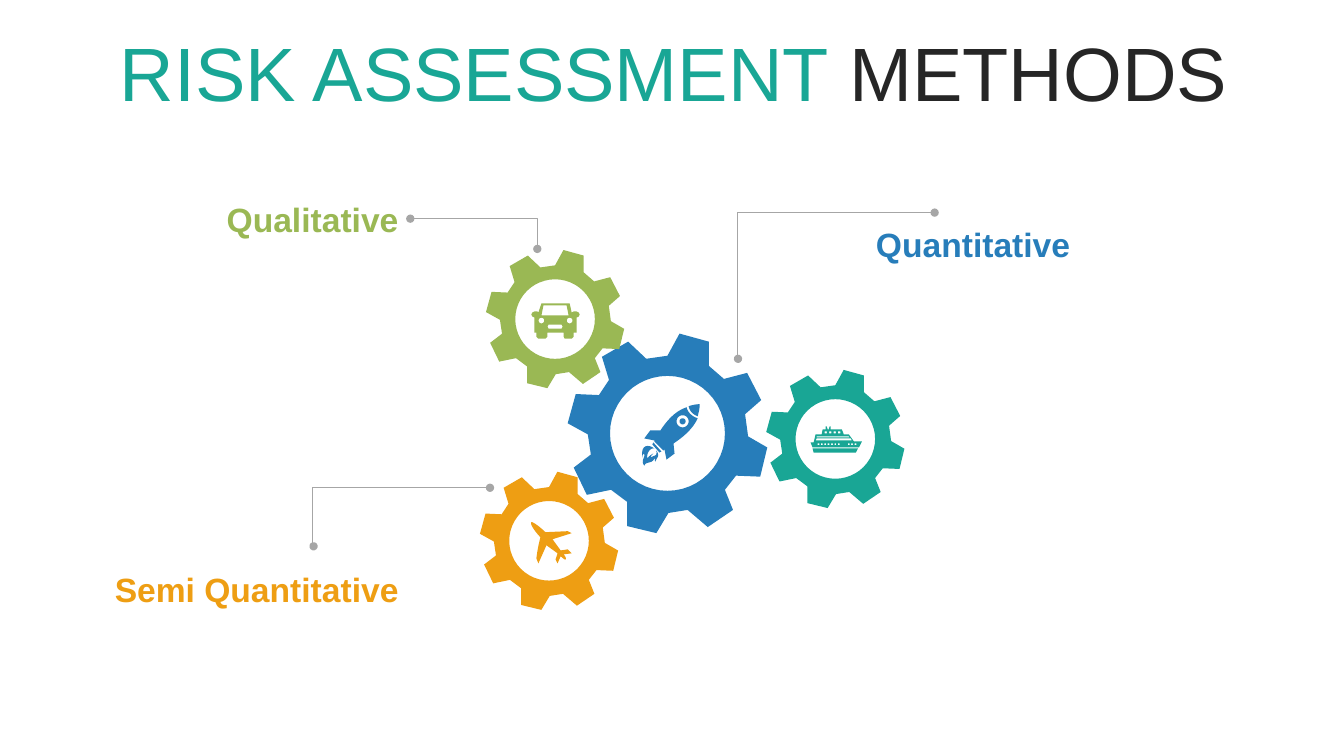
import math

from pptx import Presentation
from pptx import util as u
from pptx.dml.color import RGBColor
from pptx.enum import shapes, text
from pptx.oxml.ns import qn

COLORS = {
    "teal": "19A695", "blue": "277DBA", "green": "9AB854",
    "orange": "EE9E13", "ink": "262626", "leader": "A6A6A6",
}
FONT = "Arial"
WIDTH, HEIGHT = u.Inches(13.33), u.Inches(7.5)
UNIT = u.Inches(0.01)


def across(percent):
    return round(WIDTH * percent / 100)


def down(percent):
    return round(HEIGHT * percent / 100)


def color(name):
    return RGBColor.from_string(COLORS[name])


def circle(x, y, radius, steps=48):
    angles = [2 * math.pi * step / steps for step in range(steps)]
    return [(x + radius * math.cos(a), y + radius * math.sin(a)) for a in angles]


def rectangle(x, y, width, height):
    return [(x, y), (x + width, y), (x + width, y + height), (x, y + height)]


GEAR_SIZE = 198
GEAR = [
    [(111, 0), (140, 8), (140, 32), (155, 45), (178, 39), (192, 66), (176, 80),
     (179, 102), (198, 113), (191, 142), (167, 141), (156, 155), (164, 175),
     (139, 192), (119, 175), (100, 178), (88, 198), (59, 191), (59, 167),
     (43, 155), (19, 160), (6, 133), (23, 120), (20, 100), (0, 89), (8, 60),
     (31, 61), (41, 46), (34, 23), (60, 8), (78, 25), (99, 22)],
    circle(99, 99, 57),
]
CAR = [
    [(10, 0), (38, 0), (40, 9), (42, 8), (45, 8), (47, 9), (48, 11), (47, 13),
     (45, 14), (45, 29), (42, 29), (42, 33), (40, 35), (33, 35), (32, 33),
     (32, 29), (16, 29), (16, 33), (14, 35), (7, 35), (5, 33), (5, 29), (3, 29),
     (3, 14), (1, 13), (0, 11), (1, 9), (3, 8), (6, 8), (7, 9)],
    [(12, 2), (10, 12), (37, 12), (35, 2)],
    [(17, 21), (16, 23), (17, 25), (30, 25), (31, 23), (30, 21)],
    circle(10, 17, 2.8),
    circle(38, 17, 2.8),
]
SHIP = [
    [(19, 0), (20, 0), (20, 3), (31, 3), (33, 8), (38, 8), (43, 15), (51, 15),
     (48, 21), (2, 21), (0, 16), (3, 16), (5, 8), (11, 8), (12, 3), (15, 3),
     (15, 0), (16, 0), (17, 3), (18, 3)],
    [(2, 22), (47, 22), (45, 26), (3, 26)],
    [(6, 12), (5, 14), (41, 14), (40, 12)],
    [(6, 10), (6, 11), (39, 11), (38, 10)],
    *[rectangle(7 + 3.35 * i, 17, 1.7, 1.7) for i in range(7)],
    *[rectangle(37 + 3.35 * i, 17, 1.7, 1.7) for i in range(3)],
    *[rectangle(14 + 4.4 * i, 5, 2.3, 2) for i in range(4)],
]
PLANE = [
    [(41, 31), (33, 32), (34, 33, 36, 36, 35, 37), (34, 38, 32, 35, 30, 34),
     (27, 41), (25, 37), (27, 31), (16, 23), (8, 41), (6, 36),
     (7, 28, 8, 23, 10, 15), (6, 11, -1, 2, 1, 0), (2, -1, 11, 6, 15, 10),
     (37, 9), (41, 11), (22, 17), (30, 28), (32, 28, 37, 27, 37, 27)],
]
ROCKET = [
    [(44, 3), (45, 8, 49, 12, 55, 14), (50, 25, 40, 33, 31, 39), (32, 49),
     (24, 55), (22, 45), (21, 46), (12, 37), (12, 36), (2, 34), (8, 26),
     (18, 26), (24, 17, 32, 7, 44, 3)],
    [(57, 0), (57, 4, 56, 8, 55, 12), (50, 10, 47, 7, 46, 2), (49, 1, 53, 0, 57, 0)],
    [(11, 38), (19, 47), (17, 48), (10, 40)],
    [(12, 44), (9, 43, 4, 47, 5, 54), (7, 51, 9, 50, 11, 49),
     (10, 50, 8, 51, 9, 53), (11, 50, 15, 53, 14, 46), (18, 52, 14, 53, 13, 57),
     (12, 56, 13, 53, 12, 54), (9, 60, 4, 56, 2, 61), (-2, 56, 3, 53, 2, 50),
     (2, 49, 0, 49, 0, 53), (-2, 39, 7, 40, 12, 44)],
    circle(40, 17, 6),
    circle(40, 17, 3),
]

GEARS = [
    (42.24, 44.13, 14.85, "blue", ROCKET, (74, 70)),
    (57.01, 48.93, 10.28, "teal", SHIP, (44, 56)),
    (36.16, 33.07, 10.28, "green", CAR, (45, 53)),
    (35.71, 62.4, 10.28, "orange", PLANE, (50, 50)),
]
LEADERS = [
    ((54.91, 47.47), (69.54, 28.13), -0.3),
    ((23.33, 72.27), (36.46, 64.53), -0.5),
    ((30.53, 28.93), (39.98, 32.93), 99.9),
]
LABELS = [
    ("Qualitative", "green", 16.13, 25.6, 14.4),
    ("Semi Quantitative", "orange", 7.8, 74.53, 22.81),
    ("Quantitative", "blue", 64.44, 28.93, 16.13),
]


def flatten(contour, steps=8):
    points = [contour[0]]
    for segment in contour[1:]:
        if len(segment) == 2:
            points.append(segment)
            continue
        start = points[-1]
        controls = [start, segment[:2], segment[2:4], segment[4:]]
        for step in range(1, steps + 1):
            t = step / steps
            weights = [math.comb(3, k) * t**k * (1 - t) ** (3 - k) for k in range(4)]
            points.append(tuple(
                sum(w * c[axis] for w, c in zip(weights, controls)) for axis in (0, 1)))
    return points


def add_outline(slide, contours, left, top, unit, fill):
    builder = None
    for contour in contours:
        points = [(left + x * unit, top + y * unit) for x, y in flatten(contour)]
        if builder is None:
            builder = slide.shapes.build_freeform(*points[0], scale=1.0)
        else:
            builder.move_to(*points[0])
        builder.add_line_segments(points[1:], close=True)
    shape = builder.convert_to_shape()
    shape.shadow.inherit = False
    shape.fill.solid()
    shape.fill.fore_color.rgb = color(fill)
    shape.line.fill.background()


def add_gear(slide, left, top, size, fill, icon, offset):
    x, y = across(left), down(top)
    add_outline(slide, GEAR, x, y, across(size) / GEAR_SIZE, fill)
    add_outline(slide, icon, x + offset[0] * UNIT, y + offset[1] * UNIT, UNIT, fill)


def add_leader(slide, start, end, bend):
    connector = slide.shapes.add_connector(
        shapes.MSO_CONNECTOR.ELBOW,
        across(start[0]), down(start[1]), across(end[0]), down(end[1]))
    connector.line.color.rgb = color("leader")
    connector.line.width = u.Pt(0.5)
    properties = connector.element.spPr
    guides = properties.find(".//" + qn("a:avLst"))
    guide = guides.makeelement(
        qn("a:gd"), {"name": "adj1", "fmla": f"val {round(bend * 1000)}"})
    guides.append(guide)
    line = properties.find(qn("a:ln"))
    for tag in ("a:headEnd", "a:tailEnd"):
        line.append(line.makeelement(qn(tag), {"type": "oval"}))
    properties.append(properties.makeelement(qn("a:effectLst"), {}))


def add_label(slide, wording, fill, left, top, width):
    box = slide.shapes.add_textbox(across(left), down(top), across(width), down(6.67))
    frame = box.text_frame
    frame.word_wrap = False
    frame.auto_size = text.MSO_AUTO_SIZE.SHAPE_TO_FIT_TEXT
    paragraph = frame.paragraphs[0]
    paragraph.text = wording
    font = paragraph.font
    font.name, font.size, font.bold = FONT, u.Pt(24), True
    font.color.rgb = color(fill)


def fill_title(title, left, top, width, height):
    title.left, title.top = across(left), down(top)
    title.width, title.height = across(width), down(height)
    frame = title.text_frame
    frame.auto_size = text.MSO_AUTO_SIZE.NONE
    frame.vertical_anchor = text.MSO_ANCHOR.MIDDLE
    paragraph = frame.paragraphs[0]
    paragraph.alignment = text.PP_ALIGN.CENTER
    paragraph.line_spacing = 0.9
    for wording, fill in (("RISK ASSESSMENT ", "teal"), ("METHODS", "ink")):
        run = paragraph.add_run()
        run.text = wording
        run.font.name, run.font.size = FONT, u.Pt(54)
        run.font.color.rgb = color(fill)


def main():
    presentation = Presentation()
    presentation.slide_width, presentation.slide_height = WIDTH, HEIGHT
    slide = presentation.slides.add_slide(presentation.slide_layouts.get_by_name("Title Only"))
    fill_title(slide.shapes.title, 2.63, 4.93, 94.97, 10.53)
    for add, rows in ((add_leader, LEADERS), (add_gear, GEARS), (add_label, LABELS)):
        for row in rows:
            add(slide, *row)
    presentation.save("out.pptx")


if __name__ == "__main__":
    main()
